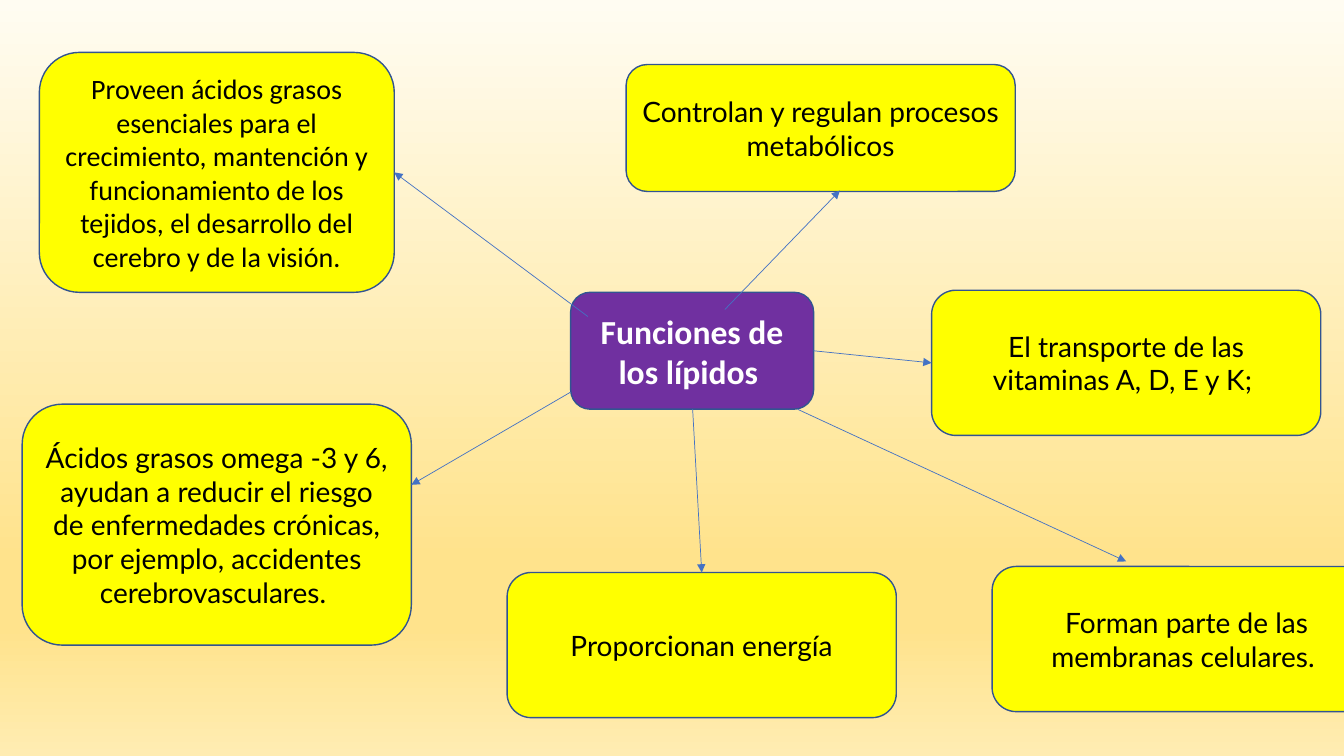
from lxml import etree
from pptx import Presentation
from pptx.dml.color import RGBColor
from pptx.enum import shapes, text
from pptx.oxml.ns import qn
from pptx.util import Inches, Pt


def color(value):
    return RGBColor.from_string(value)


def add_box(place, wording, fill, font, size, ink, bold=False):
    box = slide.shapes.add_shape(shapes.MSO_SHAPE.ROUNDED_RECTANGLE, *map(Inches, place))
    box.shadow.inherit = False
    box.fill.solid()
    box.fill.fore_color.rgb = color(fill)
    box.line.color.rgb = color("325491")
    box.line.width = Pt(1)
    frame = box.text_frame
    frame.word_wrap = True
    frame.vertical_anchor = text.MSO_ANCHOR.MIDDLE
    paragraph = frame.paragraphs[0]
    paragraph.text = wording
    paragraph.alignment = text.PP_ALIGN.CENTER
    paragraph.font.name = font
    paragraph.font.size = Pt(size)
    paragraph.font.bold = bold
    paragraph.font.color.rgb = color(ink)


deck = Presentation()
deck.slide_width = Inches(13.33)
deck.slide_height = Inches(7.5)
slide = deck.slides.add_slide(deck.slide_layouts[6])

backdrop = slide.background.fill
backdrop.gradient()
backdrop.gradient_angle = 270
stops = slide.element.find(".//" + qn("a:gsLst"))
for stop in list(stops):
    stops.remove(stop)
for percent, shade in [(0, "FFFCF2"), (74, "FFE38C"), (83, "FFE38C"), (100, "FFECB2")]:
    stop = etree.SubElement(stops, qn("a:gs"), pos=str(percent * 1000))
    etree.SubElement(stop, qn("a:srgbClr"), val=shade)

functions = [
    ((0.39, 0.52, 3.52, 2.38), "Calibri",
     "Proveen ácidos grasos esenciales para el crecimiento, mantención y "
     "funcionamiento de los tejidos, el desarrollo del cerebro y de la visión."),
    ((0.22, 4.01, 3.86, 2.39), "Lato",
     "Ácidos grasos omega -3 y 6, ayudan a reducir el riesgo de enfermedades "
     "crónicas, por ejemplo, accidentes cerebrovasculares. "),
    ((5.03, 5.68, 3.86, 1.44), "Lato", "Proporcionan energía"),
    ((6.21, 0.64, 3.86, 1.26), "Lato", "Controlan y regulan procesos metabólicos"),
    ((9.24, 2.88, 3.86, 1.44), "Lato", "El transporte de las vitaminas A, D, E y K; "),
    ((9.84, 5.62, 3.86, 1.44), "Lato", "Forman parte de las membranas celulares. "),
]
for place, font, wording in functions:
    add_box(place, wording, "FFFF00", font, 20, "000000")
add_box((5.66, 2.9, 2.41, 1.16), "Funciones de los lípidos ", "7030A0", "Calibri", 24, "FFFFFF", True)

arrows = [
    (5.83, 3.14, 3.91, 1.71),
    (7.19, 3.07, 8.33, 1.89),
    (8.07, 3.48, 9.24, 3.6),
    (7.91, 4.06, 11.17, 5.57),
    (6.87, 4.06, 6.96, 5.68),
    (5.66, 3.89, 4.08, 4.81),
]
for ends in arrows:
    arrow = slide.shapes.add_connector(shapes.MSO_CONNECTOR.STRAIGHT, *map(Inches, ends))
    arrow.line.color.rgb = color("4472C4")
    arrow.line.width = Pt(0.5)
    outline = arrow.line._get_or_add_ln()
    etree.SubElement(outline, qn("a:tailEnd"), type="triangle")
    etree.SubElement(outline.getparent(), qn("a:effectLst"))

deck.save("out.pptx")
